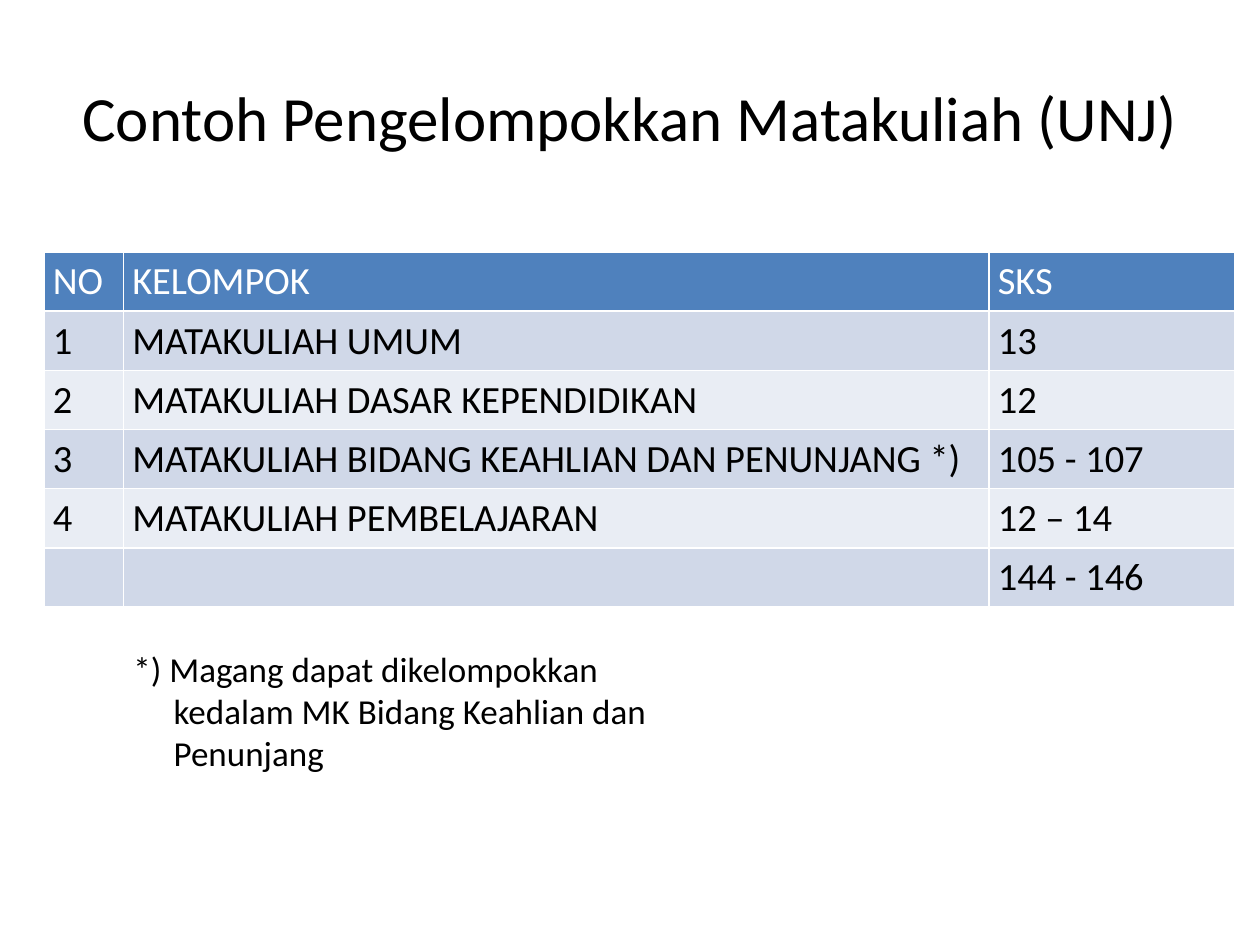
from dataclasses import dataclass

from lxml import etree
from pptx import Presentation
from pptx.dml.color import RGBColor
from pptx.enum.text import MSO_ANCHOR, PP_ALIGN
from pptx.oxml.ns import qn
from pptx.util import Emu, Inches, Pt

LEFT, CENTER = PP_ALIGN.LEFT, PP_ALIGN.CENTER
TOP, MIDDLE = MSO_ANCHOR.TOP, MSO_ANCHOR.MIDDLE

BLACK = RGBColor(0x00, 0x00, 0x00)
WHITE = RGBColor(0xFF, 0xFF, 0xFF)
HEADER_BLUE = RGBColor(0x4F, 0x81, 0xBD)
BANDS = (RGBColor(0xD0, 0xD8, 0xE8), RGBColor(0xE9, 0xED, 0xF4))

FONT = "Calibri"
SLIDE_W, SLIDE_H = Inches(10), Inches(7.5)
GRID_COLS, GRID_ROWS = 100, 75


@dataclass(frozen=True)
class Course:
    no: str
    group: str
    credits: str


@dataclass(frozen=True)
class Box:
    """A rectangle in columns and rows of the slide grid."""
    col: float
    row: float
    cols: float
    rows: float

    def emu(self) -> tuple[Emu, Emu, Emu, Emu]:
        return (across(self.col), down(self.row),
                across(self.cols), down(self.rows))


COURSES = (
    Course("NO", "KELOMPOK", "SKS"),
    Course("1", "MATAKULIAH UMUM", "13"),
    Course("2", "MATAKULIAH DASAR KEPENDIDIKAN", "12"),
    Course("3", "MATAKULIAH BIDANG KEAHLIAN DAN PENUNJANG *)", "105 - 107"),
    Course("4", "MATAKULIAH PEMBELAJARAN", "12 – 14"),
    Course("", "", "144 - 146"),
)
COLUMN_WIDTHS = (6.3, 68.7, 19.5)
ROW_HEIGHT = 4.7

TITLE_BOX = Box(5, 3, 90, 12.5)
TABLE_BOX = Box(3.5, 20, sum(COLUMN_WIDTHS), ROW_HEIGHT * len(COURSES))
NOTE_BOX = Box(9.6, 50.9, 42.8, 11.1)
NOTE_INDENT = 3.2


def across(cols: float) -> Emu:
    return Emu(round(SLIDE_W * cols / GRID_COLS))


def down(rows: float) -> Emu:
    return Emu(round(SLIDE_H * rows / GRID_ROWS))


def write(tf, text: str, *, size: float, color: RGBColor = BLACK,
          align=LEFT, hanging: float = 0) -> None:
    """Fill the first paragraph; hanging is its indent in grid columns."""
    p = tf.paragraphs[0]
    p.alignment = align
    if hanging:
        pPr = p._p.get_or_add_pPr()
        pPr.set("marL", str(across(hanging)))
        pPr.set("indent", str(-across(hanging)))
    r = p.add_run()
    r.text = text
    r.font.name = FONT
    r.font.size = Pt(size)
    r.font.bold = False
    r.font.color.rgb = color


def add_text(s, box: Box, text: str, *, anchor=TOP, **text_format) -> None:
    tf = s.shapes.add_textbox(*box.emu()).text_frame
    tf.word_wrap = True
    tf.vertical_anchor = anchor
    write(tf, text, **text_format)


def add_borders(cell, color: RGBColor, width: float) -> None:
    """Border all four sides; call before the fill, which must come last."""
    tcPr = cell._tc.get_or_add_tcPr()
    for side in ("a:lnL", "a:lnR", "a:lnT", "a:lnB"):
        ln = etree.SubElement(tcPr, qn(side), w=str(Pt(width)))
        fill = etree.SubElement(ln, qn("a:solidFill"))
        etree.SubElement(fill, qn("a:srgbClr"), val=str(color))


def add_course_table(s, box: Box, courses: tuple[Course, ...]) -> None:
    table = s.shapes.add_table(len(courses), len(COLUMN_WIDTHS),
                               *box.emu()).table
    for column, width in zip(table.columns, COLUMN_WIDTHS):
        column.width = across(width)
    for i, course in enumerate(courses):
        table.rows[i].height = down(ROW_HEIGHT)
        fill = BANDS[(i - 1) % 2] if i else HEADER_BLUE
        color = BLACK if i else WHITE
        texts = (course.no, course.group, course.credits)
        for cell, text in zip(table.rows[i].cells, texts):
            cell.margin_left = cell.margin_right = Inches(0.07)
            cell.margin_top = cell.margin_bottom = Inches(0.05)
            add_borders(cell, WHITE, 1)
            cell.fill.solid()
            cell.fill.fore_color.rgb = fill
            if text:
                write(cell.text_frame, text, size=22, color=color)


def main() -> None:
    prs = Presentation()
    prs.slide_width, prs.slide_height = SLIDE_W, SLIDE_H
    s = prs.slides.add_slide(prs.slide_layouts[6])
    add_text(s, TITLE_BOX, "Contoh Pengelompokkan Matakuliah (UNJ)",
             size=36, align=CENTER, anchor=MIDDLE)
    add_course_table(s, TABLE_BOX, COURSES)
    add_text(s, NOTE_BOX, "*) Magang dapat dikelompokkan kedalam MK Bidang "
             "Keahlian dan Penunjang", size=20, hanging=NOTE_INDENT)
    prs.save("out.pptx")


if __name__ == "__main__":
    main()
